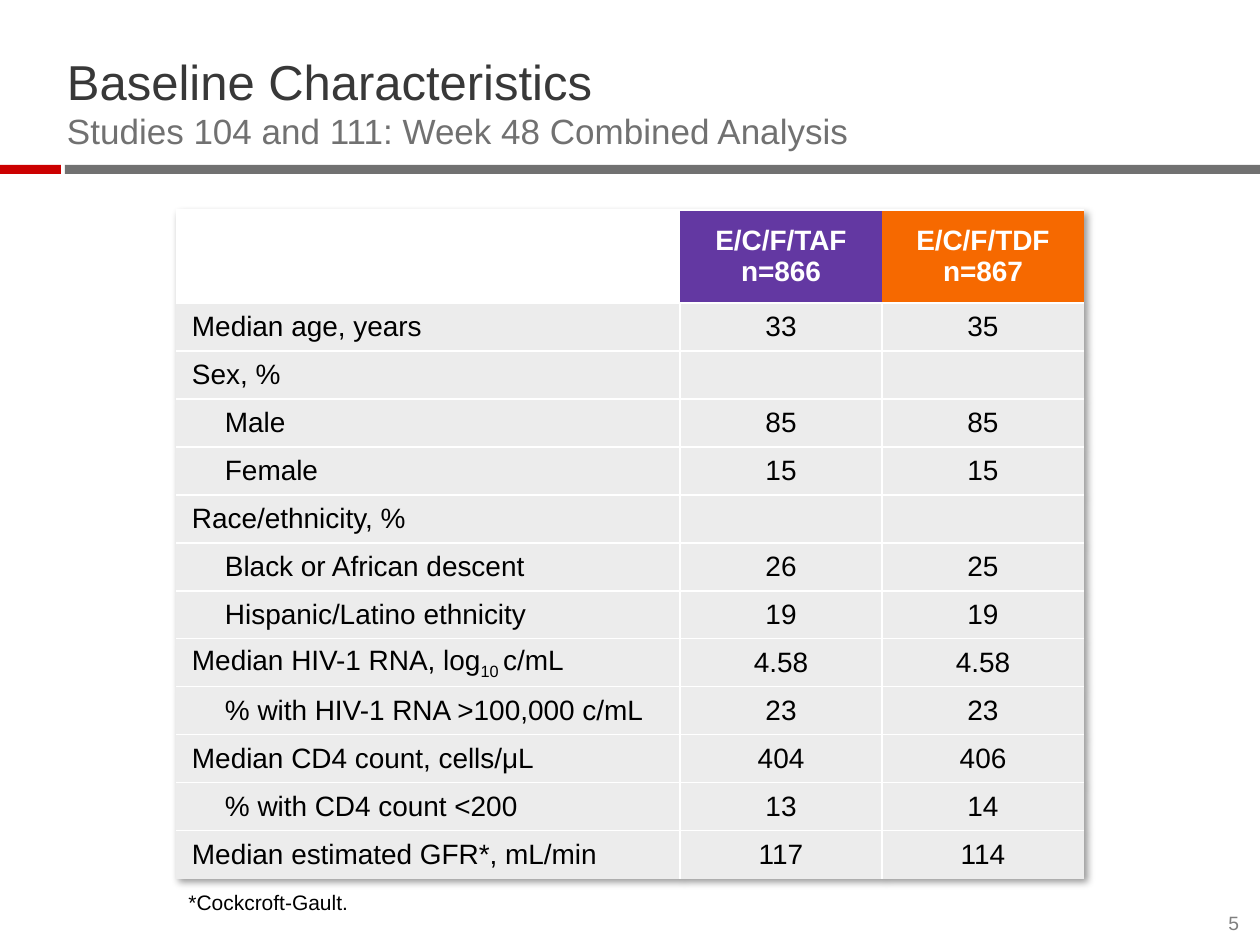
from dataclasses import dataclass

from lxml import etree
from pptx import Presentation
from pptx.dml.color import RGBColor
from pptx.enum.shapes import MSO_SHAPE
from pptx.enum.text import MSO_ANCHOR, MSO_AUTO_SIZE, PP_ALIGN
from pptx.oxml.ns import qn
from pptx.util import Emu, Pt

LEFT, CENTER, RIGHT = PP_ALIGN.LEFT, PP_ALIGN.CENTER, PP_ALIGN.RIGHT
TOP, MIDDLE, BOTTOM = MSO_ANCHOR.TOP, MSO_ANCHOR.MIDDLE, MSO_ANCHOR.BOTTOM
RECTANGLE = MSO_SHAPE.RECTANGLE
GROW = MSO_AUTO_SIZE.SHAPE_TO_FIT_TEXT

PX_PER_INCH = 126
FONT = "Arial"
PLAIN_TABLE_STYLE = "{2D5ABB26-0587-4C30-8999-92F81FD0307C}"
COLORS = {
    "title": "383838", "grey": "717171", "red": "CC0000", "white": "FFFFFF",
    "black": "000000", "number": "7F7F7F", "cell": "ECECEC",
    "taf": "6338A2", "tdf": "F66900",
}


@dataclass
class Bar:
    left: int
    width: int
    color: str


@dataclass
class Row:
    label: str
    taf: str = ""
    tdf: str = ""
    indented: bool = False


@dataclass
class Header:
    text: str
    color: str


BARS = [Bar(65, 1195, "grey"), Bar(0, 61, "red")]
HEADERS = [Header("", "white"), Header("E/C/F/TAF\vn=866", "taf"),
           Header("E/C/F/TDF\vn=867", "tdf")]
SUBSCRIPT = "10 "
ROWS = [
    Row("Median age, years", "33", "35"),
    Row("Sex, %"),
    Row("Male", "85", "85", True),
    Row("Female", "15", "15", True),
    Row("Race/ethnicity, %"),
    Row("Black or African descent", "26", "25", True),
    Row("Hispanic/Latino ethnicity", "19", "19", True),
    Row("Median HIV-1 RNA, log|10 |c/mL", "4.58", "4.58"),
    Row("% with HIV-1 RNA >100,000 c/mL", "23", "23", True),
    Row("Median CD4 count, cells/μL", "404", "406"),
    Row("% with CD4 count <200", "13", "14", True),
    Row("Median estimated GFR*, mL/min", "117", "114"),
]
COLUMN_WIDTHS = [504, 202, 202]
HEADER_HEIGHT, ROW_HEIGHT = 93, 48


def px(length: int) -> Emu:
    return Emu(round(length * 914400 / PX_PER_INCH))


def rgb(name: str) -> RGBColor:
    return RGBColor.from_string(COLORS[name])


def style_span(span, size: int, color: str, bold: bool = False) -> None:
    span.font.name = FONT
    span.font.size = Pt(size)
    span.font.bold = bold
    span.font.color.rgb = rgb(color)


def add_bar(page, bar: Bar) -> None:
    shape = page.shapes.add_shape(RECTANGLE, px(bar.left), px(165), px(bar.width), px(9))
    shape.shadow.inherit = False
    shape.fill.solid()
    shape.fill.fore_color.rgb = rgb(bar.color)
    shape.line.fill.background()


def add_text(page, area: tuple[int, int, int, int], text: str,
             styles: list[tuple[int, str]], align=LEFT, anchor=BOTTOM,
             inset: bool = False) -> None:
    box = page.shapes.add_textbox(*map(px, area))
    frame = box.text_frame
    frame.vertical_anchor = anchor
    if inset:
        frame.word_wrap = False
        frame.auto_size = GROW
    else:
        frame.word_wrap = True
        frame.margin_left = frame.margin_right = 0
        frame.margin_top = frame.margin_bottom = 0
    para = frame.paragraphs[0]
    para.text = text
    para.alignment = align
    for span, (size, color) in zip(para.runs, styles):
        style_span(span, size, color)


def add_borders(cell, sides: dict[str, float]) -> None:
    properties = cell._tc.get_or_add_tcPr()
    for position, side in enumerate(s for s in "LRTB" if s in sides):
        line = etree.Element(qn("a:ln" + side), w=str(Pt(sides[side])))
        fill = etree.SubElement(line, qn("a:solidFill"))
        etree.SubElement(fill, qn("a:srgbClr"), val=COLORS["white"])
        properties.insert(position, line)


def fill_cell(cell, text: str, fill: str, color: str, align, bold: bool = False,
              indented: bool = False) -> None:
    cell.fill.solid()
    cell.fill.fore_color.rgb = rgb(fill)
    cell.vertical_anchor = MIDDLE
    cell.margin_left = px(49 if indented else 16)
    cell.margin_right = px(16)
    cell.margin_top = cell.margin_bottom = px(3)
    para = cell.text_frame.paragraphs[0]
    para.alignment = align
    if "|" in text:
        for part in text.split("|"):
            para.add_run().text = part
    else:
        para.text = text
    for span in para.runs:
        style_span(span, 16, color, bold)
        if span.text == SUBSCRIPT:
            span._r.get_or_add_rPr().set("baseline", "-25000")


def add_table_shadow(table) -> None:
    properties = table._tbl.tblPr
    effects = etree.Element(qn("a:effectLst"))
    shadow = etree.SubElement(effects, qn("a:outerShdw"), blurRad="50800", dist="38100",
                              dir="2700000", algn="tl", rotWithShape="0")
    tint = etree.SubElement(shadow, qn("a:srgbClr"), val=COLORS["black"])
    etree.SubElement(tint, qn("a:alpha"), val="40000")
    properties.insert(0, effects)


def add_characteristics(page) -> None:
    height = HEADER_HEIGHT + ROW_HEIGHT * len(ROWS)
    table = page.shapes.add_table(len(ROWS) + 1, len(COLUMN_WIDTHS), px(176), px(210),
                                  px(sum(COLUMN_WIDTHS)), px(height)).table
    table.first_row = table.horz_banding = False
    table._tbl.tblPr.find(qn("a:tableStyleId")).text = PLAIN_TABLE_STYLE
    add_table_shadow(table)
    for column, width in zip(table.columns, COLUMN_WIDTHS):
        column.width = px(width)
    for index, line in enumerate(table.rows):
        line.height = px(ROW_HEIGHT if index else HEADER_HEIGHT)

    # Header row
    for column, header in enumerate(HEADERS):
        cell = table.cell(0, column)
        fill_cell(cell, header.text, header.color, "white", CENTER, bold=True)
        add_borders(cell, {"T": 0.75, "B": 0.75})

    # Data rows, with white lines between cells only
    last_column = len(COLUMN_WIDTHS) - 1
    for index, row in enumerate(ROWS, start=1):
        for column, text in enumerate((row.label, row.taf, row.tdf)):
            cell = table.cell(index, column)
            fill_cell(cell, text, "cell", "black", CENTER if column else LEFT,
                      indented=row.indented and column == 0)
            sides = {"T": 0.75 if index == 1 else 1}
            if column > 0:
                sides["L"] = 1
            if column < last_column:
                sides["R"] = 1
            if index < len(ROWS):
                sides["B"] = 1
            add_borders(cell, sides)


def main() -> None:
    deck = Presentation()
    deck.slide_width, deck.slide_height = px(1260), px(945)
    page = deck.slides.add_slide(deck.slide_layouts[6])

    # Title and divider
    for bar in BARS:
        add_bar(page, bar)
    add_text(page, (67, 59, 1134, 93),
             "Baseline Characteristics\vStudies 104 and 111: Week 48 Combined Analysis",
             [(28, "title"), (20, "grey")])

    # Table
    add_characteristics(page)

    # Footnote and page number
    add_text(page, (176, 883, 193, 38), "*Cockcroft-Gault.", [(12, "black")],
             anchor=TOP, inset=True)
    add_text(page, (1205, 911, 34, 23), "5", [(11, "number")], align=RIGHT)

    deck.save("out.pptx")


if __name__ == "__main__":
    main()
